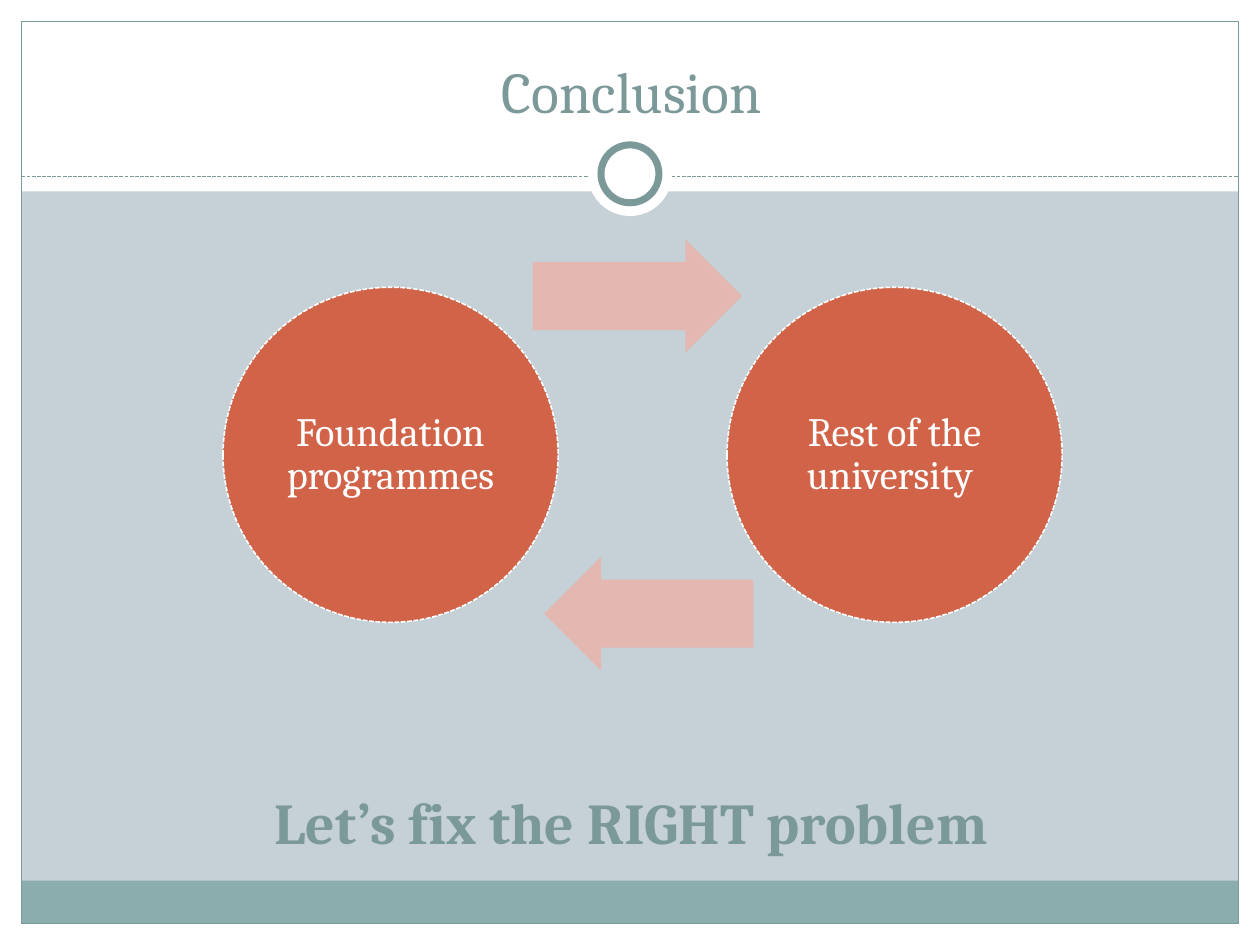
import pptx
import pptx.util
import pptx.dml.color
import pptx.enum.dml
import pptx.enum.shapes
import pptx.enum.text
import pptx.oxml.ns
from lxml import etree

TITLE = "Conclusion"
CYCLE = ["Foundation programmes", "Rest of the university "]
MESSAGE = "Let’s fix the RIGHT problem"
FONT = "Cambria"
WHITE, SAGE, TEAL = "FFFFFF", "7C999A", "8CADAE"
MIST, RUST, PINK = "C5D1D7", "D16349", "E5B7B1"

W, H = 10, 7.5
EDGE = 0.17                        # white frame around the slide
HEADER_H, FOOTER_H, RULE_Y = 1.52, 0.34, 1.4
CIRCLE, CIRCLE_X, CIRCLE_Y, STEP = 2.66, 1.77, 2.28, 4
LABEL = 1.88                       # text square inside a circle
ARROWS = [(4.23, 1.9, 0), (4.32, 4.42, 180)]    # left, top, rotation
ARROW_W, ARROW_H = 1.66, 0.9

Inches, Pt = pptx.util.Inches, pptx.util.Pt
SHAPE = pptx.enum.shapes.MSO_SHAPE
ANCHOR = pptx.enum.text.MSO_ANCHOR

prs = pptx.Presentation()
prs.slide_width, prs.slide_height = Inches(W), Inches(H)
s = prs.slides.add_slide(prs.slide_layouts[6])


def rgb(color):
    return pptx.dml.color.RGBColor.from_string(color)


def set_line(line, color, width, dashed=False):
    line.color.rgb = rgb(color)
    line.width = Pt(width)
    if dashed:
        line.dash_style = pptx.enum.dml.MSO_LINE.SQUARE_DOT


def add_shape(kind, x, y, w, h, fill=None, line=None, width=0.75, dashed=False):
    sp = s.shapes.add_shape(kind, Inches(x), Inches(y), Inches(w), Inches(h))
    sp.shadow.inherit = False
    if fill:
        sp.fill.solid()
        sp.fill.fore_color.rgb = rgb(fill)
    else:
        sp.fill.background()
    if line:
        set_line(sp.line, line, width, dashed)
    else:
        sp.line.fill.background()
    return sp


def add_disc(cx, cy, size, **style):
    return add_shape(SHAPE.OVAL, cx - size / 2, cy - size / 2, size, size, **style)


def add_text(text, x, y, w, h, size=33, color=SAGE, bold=False,
             anchor=ANCHOR.BOTTOM, inset=None, spacing=None):
    tf = s.shapes.add_textbox(Inches(x), Inches(y), Inches(w), Inches(h)).text_frame
    tf.word_wrap = True
    tf.vertical_anchor = anchor
    if inset is not None:
        tf.margin_left = tf.margin_right = Inches(inset)
        tf.margin_top = tf.margin_bottom = Inches(inset)
    p = tf.paragraphs[0]
    p.alignment = pptx.enum.text.PP_ALIGN.CENTER
    if spacing:
        p.line_spacing = spacing
    r = p.add_run()
    r.text = text
    r.font.name, r.font.size, r.font.bold = FONT, Pt(size), bold
    r.font.color.rgb = rgb(color)


# Background and white frame
s.background.fill.solid()
s.background.fill.fore_color.rgb = rgb(MIST)
for box in [(0, H - EDGE, W, EDGE), (0, 0, W, HEADER_H),
            (0, 0, EDGE, H), (W - EDGE, 0, EDGE, H)]:
    add_shape(SHAPE.RECTANGLE, *box, fill=WHITE)

# Footer band and outline
inner_w = W - 2 * EDGE
add_shape(SHAPE.RECTANGLE, EDGE, H - EDGE - FOOTER_H, inner_w, FOOTER_H, fill=TEAL)
add_shape(SHAPE.RECTANGLE, EDGE, EDGE, inner_w, H - 2 * EDGE, line=SAGE)

# Dashed rule with the ring at its middle
rule = s.shapes.add_connector(pptx.enum.shapes.MSO_CONNECTOR.STRAIGHT, Inches(EDGE),
                              Inches(RULE_Y), Inches(W - EDGE), Inches(RULE_Y))
set_line(rule.line, SAGE, 0.75, dashed=True)
etree.SubElement(rule._element.spPr, pptx.oxml.ns.qn("a:effectLst"))
add_disc(W / 2, 1.38, 0.67, fill=WHITE)
add_disc(W / 2, 1.38, 0.46, fill=WHITE, line=SAGE, width=4)

# Title
add_text(TITLE, 0.35, 0.21, 9.33, 0.83)

# Cycle: each circle is followed by its arrow
for i, (label, (x, y, turn)) in enumerate(zip(CYCLE, ARROWS)):
    cx, cy = CIRCLE_X + i * STEP + CIRCLE / 2, CIRCLE_Y + CIRCLE / 2
    add_disc(cx, cy, CIRCLE, fill=RUST, line=WHITE, width=0.9, dashed=True)
    add_text(label, cx - LABEL / 2, cy - LABEL / 2, LABEL, LABEL, size=23,
             color=WHITE, anchor=ANCHOR.MIDDLE, inset=0.03, spacing=0.9)
    arrow = add_shape(SHAPE.RIGHT_ARROW, x, y, ARROW_W, ARROW_H, fill=PINK)
    arrow.adjustments[0], arrow.adjustments[1] = 0.6, 0.5
    arrow.rotation = turn

# Closing message
add_text(MESSAGE, 0.56, 6.03, 8.9, 0.81, bold=True)

prs.save("out.pptx")
